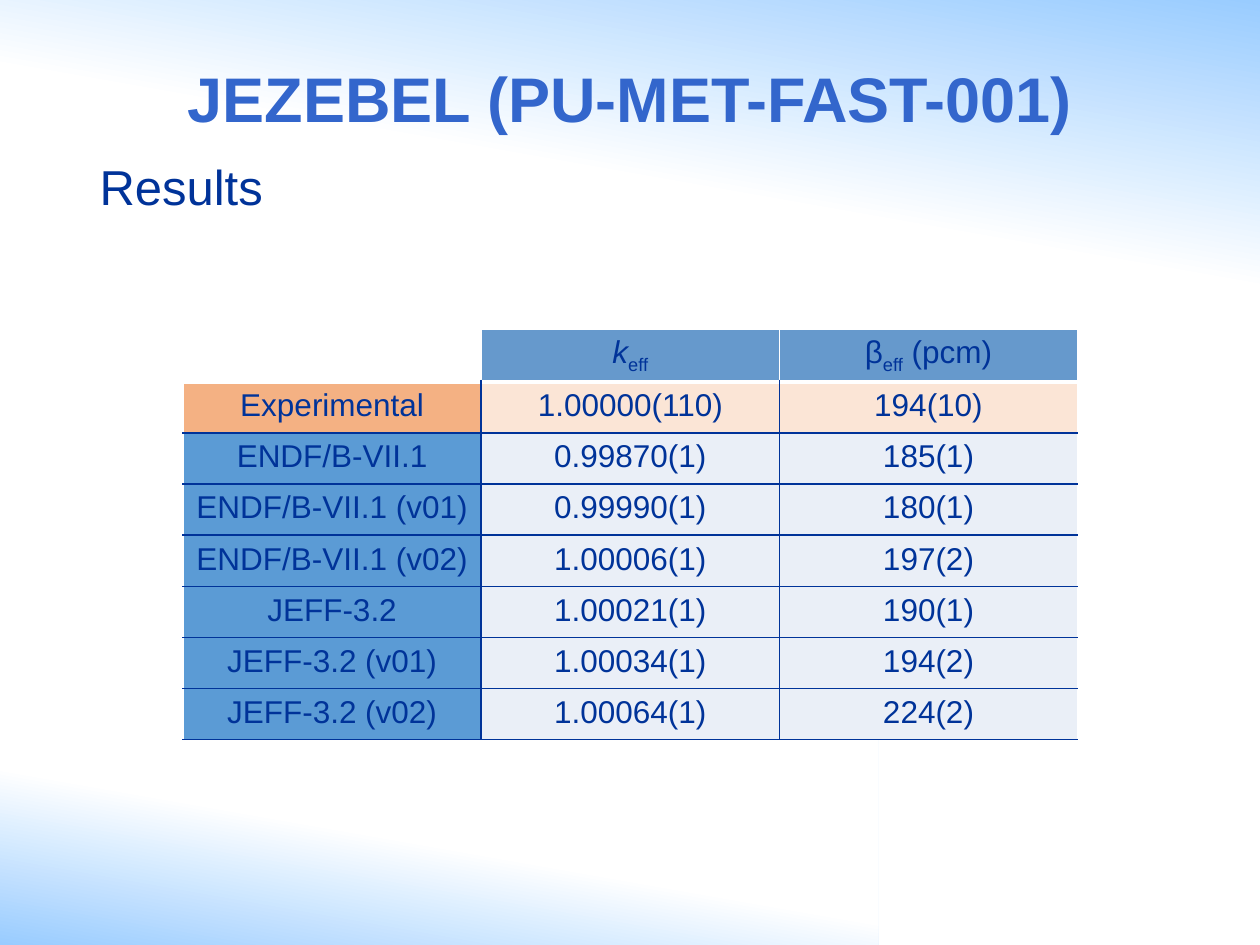
from lxml.etree import SubElement
from pptx import Presentation
from pptx.dml.color import RGBColor
from pptx.enum.shapes import MSO_SHAPE
from pptx.enum.text import MSO_ANCHOR, MSO_AUTO_SIZE, PP_ALIGN
from pptx.oxml.ns import qn
from pptx.util import Pt

WHITE = RGBColor(0xFF, 0xFF, 0xFF)
SKY = RGBColor(0x99, 0xCC, 0xFF)
TITLE_BLUE = RGBColor(0x33, 0x66, 0xCC)
NAVY = RGBColor(0x00, 0x33, 0x99)
HEADER_BLUE = RGBColor(0x66, 0x99, 0xCC)
LABEL_BLUE = RGBColor(0x5B, 0x9B, 0xD5)
PALE_BLUE = RGBColor(0xEA, 0xEF, 0xF7)
ORANGE = RGBColor(0xF4, 0xB1, 0x83)
PALE_ORANGE = RGBColor(0xFB, 0xE5, 0xD6)

# Header cells as (text, style) spans
HEADERS = [
    [],
    [("k", "italic"), ("eff", "sub")],
    [("β", ""), ("eff", "sub"), (" (pcm)", "")],
]
RESULTS = [
    ("Experimental", "1.00000(110)", "194(10)"),
    ("ENDF/B-VII.1", "0.99870(1)", "185(1)"),
    ("ENDF/B-VII.1 (v01)", "0.99990(1)", "180(1)"),
    ("ENDF/B-VII.1 (v02)", "1.00006(1)", "197(2)"),
    ("JEFF-3.2", "1.00021(1)", "190(1)"),
    ("JEFF-3.2 (v01)", "1.00034(1)", "194(2)"),
    ("JEFF-3.2 (v02)", "1.00064(1)", "224(2)"),
]


class SlideBuilder:
    font_name = "Arial"
    table_size = 18

    def __init__(self, page):
        self.page = page

    def style(self, font, size, color, bold=False):
        font.name = self.font_name
        font.size = Pt(size)
        font.color.rgb = color
        font.bold = bold

    def gradient_band(self, left, top, width, height, angle, white_at):
        """Add a sky-to-white rectangle behind everything else."""
        band = self.page.shapes.add_shape(
            MSO_SHAPE.RECTANGLE, Pt(left), Pt(top), Pt(width), Pt(height))
        band.shadow.inherit = False
        band.line.fill.background()
        band.fill.gradient()
        band.fill.gradient_angle = angle
        start, end = band.fill.gradient_stops
        start.color.rgb, start.position = SKY, 0
        end.color.rgb, end.position = WHITE, white_at
        self.page.shapes._spTree.insert(2, band._element)

    def placeholder(self, index, text, frame, size, color, bold=False,
                    align=PP_ALIGN.LEFT, line_spacing=1.0):
        box = self.page.placeholders[index]
        box.left, box.top, box.width, box.height = map(Pt, frame)
        text_frame = box.text_frame
        text_frame.text = text
        text_frame.auto_size = MSO_AUTO_SIZE.NONE
        text_frame.vertical_anchor = MSO_ANCHOR.MIDDLE
        para = text_frame.paragraphs[0]
        para.alignment = align
        para.line_spacing = line_spacing
        para.space_before = Pt(0)
        properties = para._p.get_or_add_pPr()
        properties.set("marL", "0")
        properties.set("indent", "0")
        SubElement(properties, qn("a:buNone"))
        self.style(para.runs[0].font, size, color, bold)

    def border(self, cell, side, color, width=1):
        line = SubElement(cell._tc.get_or_add_tcPr(), qn(f"a:ln{side}"),
                          w=str(Pt(width)))
        fill = SubElement(line, qn("a:solidFill"))
        SubElement(fill, qn("a:srgbClr"), val=str(color))

    def cell(self, cell, spans, fill, borders):
        """Fill a cell; borders maps each side to (color, width)."""
        cell.margin_left = cell.margin_right = Pt(4)
        for side, (color, width) in borders.items():
            self.border(cell, side, color, width)
        if fill is None:
            cell.fill.background()
        else:
            cell.fill.solid()
            cell.fill.fore_color.rgb = fill
        para = cell.text_frame.paragraphs[0]
        para.alignment = PP_ALIGN.CENTER
        self.style(para.font, self.table_size, NAVY)
        for text, kind in spans:
            span = para.add_run()
            span.text = text
            self.style(span.font, self.table_size, NAVY)
            span.font.italic = kind == "italic"
            if kind == "sub":
                span.font._element.set("baseline", "-25000")

    def results_table(self, left, top, column_width, row_height):
        rows, columns = len(RESULTS) + 1, len(HEADERS)
        table = self.page.shapes.add_table(
            rows, columns, Pt(left), Pt(top),
            Pt(column_width * columns), Pt(row_height * rows)).table
        table.first_row = table.horz_banding = False
        for column in table.columns:
            column.width = Pt(column_width)
        for row in table.rows:
            row.height = Pt(row_height)

        thin_white, thin_navy = (WHITE, 1), (NAVY, 1)
        for column, spans in enumerate(HEADERS):
            borders = dict.fromkeys("LRT", thin_white) | {"B": (WHITE, 3)}
            self.cell(table.cell(0, column), spans,
                      HEADER_BLUE if spans else None, borders)
        for row, values in enumerate(RESULTS, start=1):
            label, body = (ORANGE, PALE_ORANGE) if row == 1 else (LABEL_BLUE, PALE_BLUE)
            for column, value in enumerate(values):
                borders = {
                    "L": thin_white if column == 0 else thin_navy,
                    "R": thin_white if column == columns - 1 else thin_navy,
                    "T": thin_white if row == 1 else thin_navy,
                    "B": thin_navy,
                }
                self.cell(table.cell(row, column), [(value, "")],
                          label if column == 0 else body, borders)


def main():
    deck = Presentation()
    deck.slide_width, deck.slide_height = Pt(720), Pt(540)
    builder = SlideBuilder(deck.slides.add_slide(deck.slide_layouts[1]))
    builder.gradient_band(0, 0, 720, 168, angle=260, white_at=0.56)
    builder.gradient_band(0, 417.6, 502, 122.4, angle=80, white_at=0.48)
    builder.placeholder(0, "JEZEBEL (PU-MET-FAST-001)", (49.7, 21, 620.6, 69),
                        36, TITLE_BLUE, bold=True, align=PP_ALIGN.CENTER)
    builder.placeholder(1, "Results", (49.7, 82, 551.5, 52.6), 28, NAVY,
                        line_spacing=0.9)
    builder.results_table(104.6, 188, column_width=170.4, row_height=29.2)
    deck.save("out.pptx")


if __name__ == "__main__":
    main()
